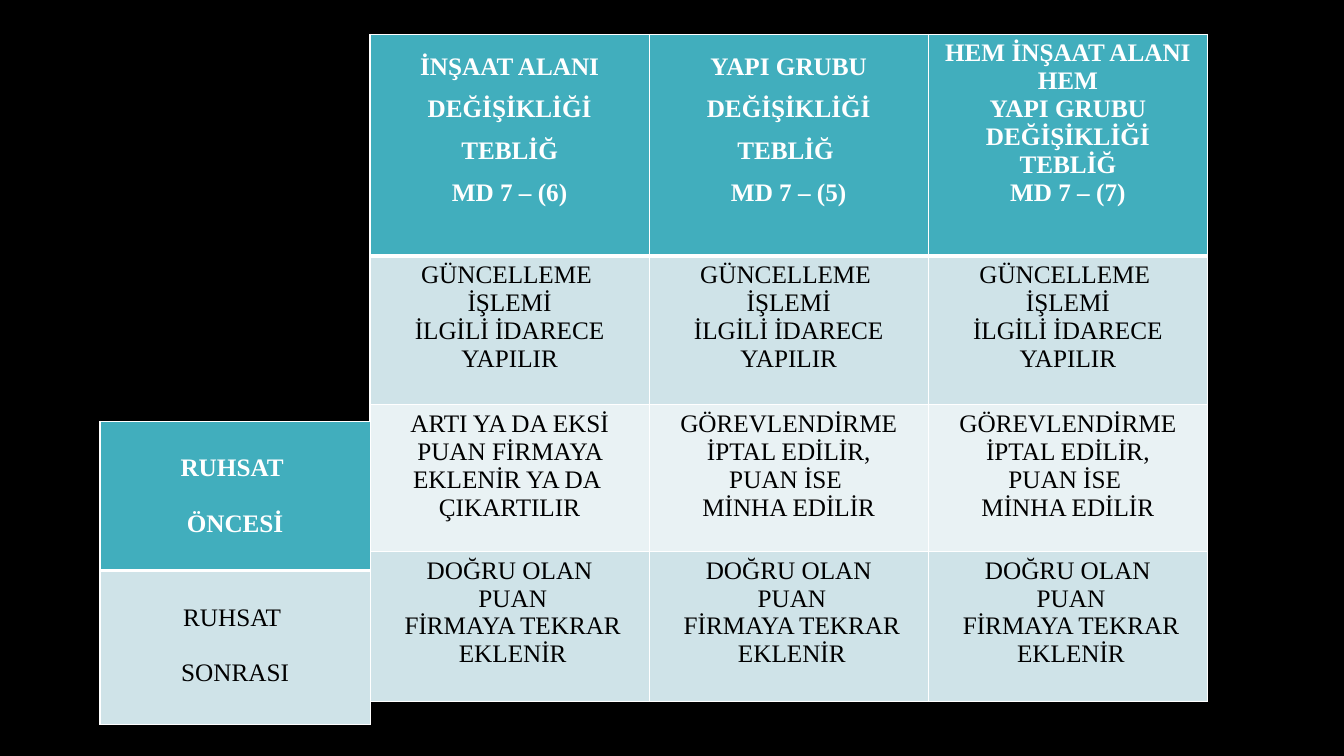
"""Builds the slide comparing permit changes before and after licensing."""
from lxml import etree
from pptx import Presentation
from pptx import util as u
from pptx.dml.color import RGBColor
from pptx.enum import text
from pptx.oxml import ns

BLACK = RGBColor(0x00, 0x00, 0x00)
WHITE = RGBColor(0xFF, 0xFF, 0xFF)
TEAL = RGBColor(0x41, 0xAE, 0xBD)
PALE = RGBColor(0xCF, 0xE3, 0xE8)
PALEST = RGBColor(0xE9, 0xF2, 0xF4)

UPDATE = "GÜNCELLEME \nİŞLEMİ\nİLGİLİ İDARECE\nYAPILIR"
ADJUST = "ARTI YA DA EKSİ PUAN FİRMAYA EKLENİR YA DA \nÇIKARTILIR"
CANCEL = "GÖREVLENDİRME İPTAL EDİLİR,\nPUAN İSE \nMİNHA EDİLİR"
RESTORE = "DOĞRU OLAN\n PUAN\n FİRMAYA TEKRAR\n EKLENİR"
CHANGES = [
    [
        "İNŞAAT ALANI\nDEĞİŞİKLİĞİ\nTEBLİĞ\nMD 7 – (6)",
        "YAPI GRUBU\nDEĞİŞİKLİĞİ\nTEBLİĞ \nMD 7 – (5)",
        "HEM İNŞAAT ALANI\nHEM\nYAPI GRUBU\nDEĞİŞİKLİĞİ\nTEBLİĞ\nMD 7 – (7)",
    ],
    [UPDATE] * 3,
    [ADJUST, CANCEL, CANCEL],
    [RESTORE] * 3,
]
STAGES = [["RUHSAT \nÖNCESİ"], ["RUHSAT \nSONRASI"]]


class SlideBuilder:
    """Holds the shared style and the current slide."""

    font = "Times New Roman"
    size = u.Pt(18)

    def __init__(self, deck):
        self.page = deck.slides.add_slide(deck.slide_layouts[6])
        self.page.background.fill.solid()
        self.page.background.fill.fore_color.rgb = BLACK

    def table(self, left, top, column_width, heights, rows, spacings):
        """Draws a banded table with a teal header row."""
        columns = len(rows[0])
        grid = self.page.shapes.add_table(
            len(rows), columns, u.Pt(left), u.Pt(top),
            u.Pt(column_width * columns), u.Pt(sum(heights))).table
        for column in grid.columns:
            column.width = u.Pt(column_width)
        for index, (height, values) in enumerate(zip(heights, rows)):
            grid.rows[index].height = u.Pt(height)
            for position, value in enumerate(values):
                cell = grid.cell(index, position)
                self.fill_cell(cell, value, index, spacings[position])
                self.borders(cell, index)

    def fill_cell(self, cell, value, index, spacing):
        """Writes and formats one cell according to its row."""
        header = index == 0
        cell.fill.solid()
        cell.fill.fore_color.rgb = TEAL if header else (PALEST, PALE)[index % 2]
        cell.vertical_anchor = text.MSO_ANCHOR.TOP
        cell.text_frame.text = value
        for para in cell.text_frame.paragraphs:
            para.alignment = text.PP_ALIGN.CENTER
            para.line_spacing = spacing if header or spacing == 2.0 else 1.0
            for span in para.runs:
                span.font.name = self.font
                span.font.size = self.size
                span.font.bold = header
                span.font.color.rgb = WHITE if header else BLACK

    def borders(self, cell, index):
        """Gives a cell white borders, thick between header and body."""
        widths = {"lnL": 1, "lnR": 1, "lnT": 3 if index == 1 else 1,
                  "lnB": 3 if index == 0 else 1}
        properties = cell._tc.get_or_add_tcPr()
        for place, (tag, width) in enumerate(widths.items()):
            line = etree.Element(ns.qn("a:" + tag), w=str(u.Pt(width)))
            paint = etree.SubElement(line, ns.qn("a:solidFill"))
            etree.SubElement(paint, ns.qn("a:srgbClr"), val=str(WHITE))
            properties.insert(place, line)


def main():
    """Builds and saves the deck."""
    deck = Presentation()
    deck.slide_width, deck.slide_height = u.Pt(960), u.Pt(540)
    builder = SlideBuilder(deck)
    builder.table(264.3, 24.6, 199.4, [158.4, 106.2, 104.8, 107.2],
                  CHANGES, [1.5, 1.5, 1.0])
    builder.table(71.4, 301, 193, [106.6, 110.2], STAGES, [2.0])
    deck.save("out.pptx")


if __name__ == "__main__":
    main()
